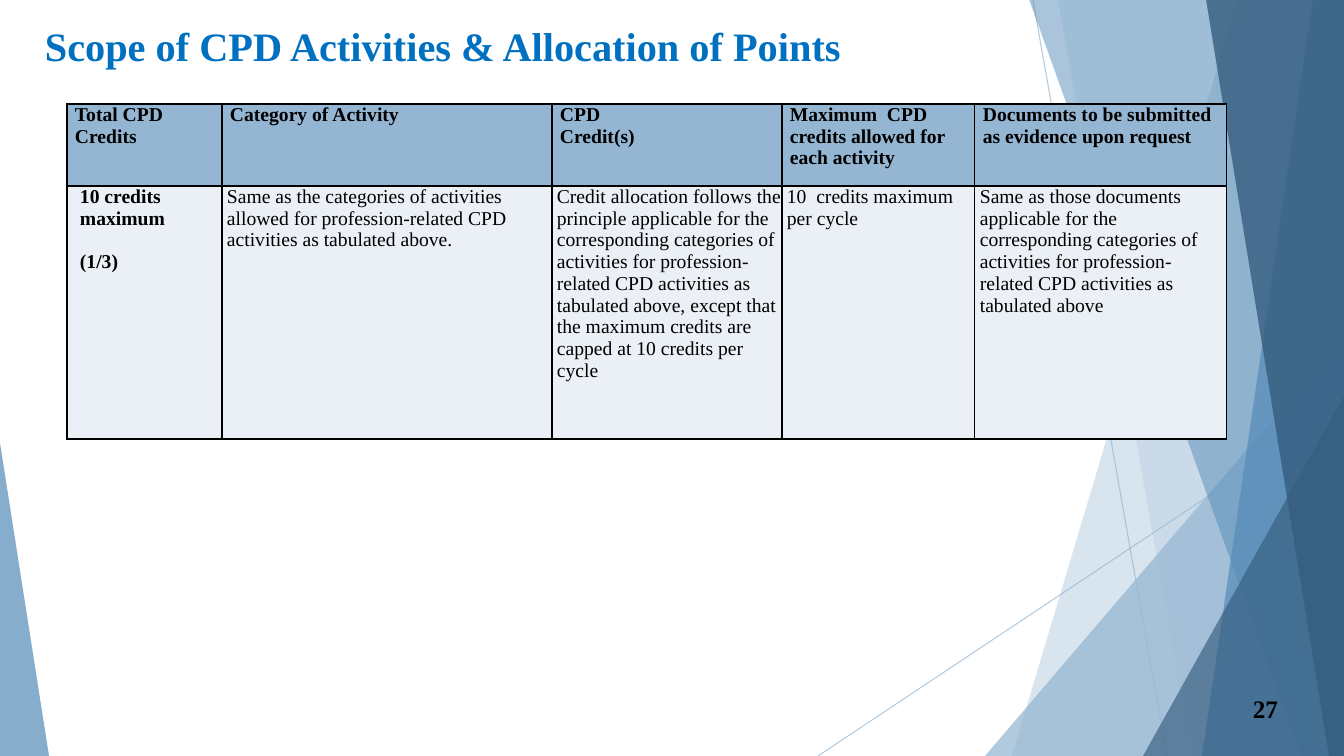
from lxml import etree
from pptx import Presentation
from pptx import util as u
from pptx.dml.color import RGBColor
from pptx.enum import shapes, text
from pptx.oxml.ns import qn

PX = 12192000 / 1344
FONT = "Times New Roman"
COLORS = {"pale": "94B6D2", "mid": "558BB8", "deep": "355D7E",
          "title": "0070C0", "ink": "000000", "body": "EAF0F6"}


def px(*nums):
    return [round(n * PX) for n in nums]


def paint(fill, color, alpha=100):
    """Fill with a solid colour at an opacity in percent."""
    fill.solid()
    fill.fore_color.rgb = RGBColor.from_string(COLORS[color])
    if alpha < 100:
        tone = fill._xPr.find(qn("a:solidFill"))[0]
        etree.SubElement(tone, qn("a:alpha"), val=str(alpha * 1000))


deck = Presentation()
deck.slide_width, deck.slide_height = px(1344, 756)
slide = deck.slides.add_slide(deck.slide_layouts[6])
items = slide.shapes

# Thin crossing lines
for ends in [(1033, 0, 1167, 756), (1344, 406, 818, 756)]:
    line = items.add_connector(shapes.MSO_CONNECTOR.STRAIGHT, *px(*ends))
    line.line.width = u.Pt(0.75)
    paint(line.line.fill, "pale", 70)
    etree.SubElement(line._element.spPr, qn("a:effectLst"))

# Bands: top x and bottom x of the slanted edge, up to the right side of the slide
# Wedges: left, top, width, height and apex position
facets = [
    ("band", (1238, 1012), "pale", 36),
    ("band", (1058, 1192), "pale", 20),
    ("wedge", (985, 336, 359, 420, 1), "pale", 72),
    ("band", (1029, 1301), "mid", 50),
    ("band", (1313, 1202), "mid", 70),
    ("band", (1206, 1329), "deep", 80),
    ("wedge", (1143, 396, 201, 360, 1), "deep", 66),
    ("wedge", (0, 443, 49, 313, 0), "mid", 70),
]
for kind, geo, color, alpha in facets:
    if kind == "band":
        top, foot = geo
        path = items.build_freeform(top, -1, scale=PX)
        path.add_line_segments([(1344, -1), (1344, 756), (foot, 756)], close=True)
        facet = path.convert_to_shape()
    else:
        *box, apex = geo
        facet = items.add_shape(shapes.MSO_SHAPE.ISOSCELES_TRIANGLE, *px(*box))
        facet.adjustments[0] = apex
    facet.shadow.inherit = False
    facet.line.fill.background()
    paint(facet.fill, color, alpha)

# Title and page number
labels = [
    ((35, 11, 1288, 56), "Scope of CPD Activities & Allocation of Points", 28.8,
     "title", text.PP_ALIGN.LEFT, text.MSO_ANCHOR.TOP),
    ((1213, 688, 75, 40), "27", 18,
     "ink", text.PP_ALIGN.RIGHT, text.MSO_ANCHOR.MIDDLE),
]
for box, words, size, color, align, anchor in labels:
    frame = items.add_textbox(*px(*box)).text_frame
    frame.word_wrap = True
    frame.vertical_anchor = anchor
    if anchor == text.MSO_ANCHOR.TOP:
        frame.margin_top = px(10)[0]
    para = frame.paragraphs[0]
    para.text = words
    para.alignment = align
    font = para.font
    font.name, font.size, font.bold = FONT, u.Pt(size), True
    font.color.rgb = RGBColor.from_string(COLORS[color])

# Table
rows = [
    ["Total CPD\nCredits", "Category of Activity", "CPD\nCredit(s)",
     "Maximum  CPD credits allowed for each activity",
     "Documents to be submitted as evidence upon request"],
    ["10 credits maximum\n(1/3)",
     "Same as the categories of activities allowed for profession-related CPD "
     "activities as tabulated above.",
     "Credit allocation follows the principle applicable for the corresponding "
     "categories of activities for profession-related CPD activities as tabulated "
     "above, except that the maximum credits are capped at 10 credits per cycle",
     "10  credits maximum per cycle",
     "Same as those documents applicable for the corresponding categories of "
     "activities for profession- related CPD activities as tabulated above"],
]
widths = [155, 330, 230, 193, 252]
heights = [82, 253]
grid = items.add_table(2, 5, *px(67, 104, sum(widths), sum(heights))).table
for col, wide in zip(grid.columns, widths):
    col.width = px(wide)[0]
for row, high in zip(grid.rows, heights):
    row.height = px(high)[0]

for r, row in enumerate(rows):
    for c, words in enumerate(row):
        cell = grid.cell(r, c)
        head, first = r == 0, c == 0
        cell.margin_left = px(8 if head else 13 if first else 5)[0]
        cell.margin_top = cell.margin_right = cell.margin_bottom = 0
        cell.text = words
        for n, para in enumerate(cell.text_frame.paragraphs):
            font = para.font
            font.name, font.size, font.bold = FONT, u.Pt(14), head or first
            font.color.rgb = RGBColor.from_string(COLORS["ink"])
            if not head:
                para.line_spacing = u.Pt(15.5)
                if n:
                    para.space_before = u.Pt(15.5)
        props = cell._tc.get_or_add_tcPr()
        for side in ("lnL", "lnR", "lnT", "lnB"):
            edge = etree.SubElement(props, qn("a:" + side), w="12700")
            solid = etree.SubElement(edge, qn("a:solidFill"))
            etree.SubElement(solid, qn("a:srgbClr"), val=COLORS["ink"])
        paint(cell.fill, "pale" if head else "body")

deck.save("out.pptx")
